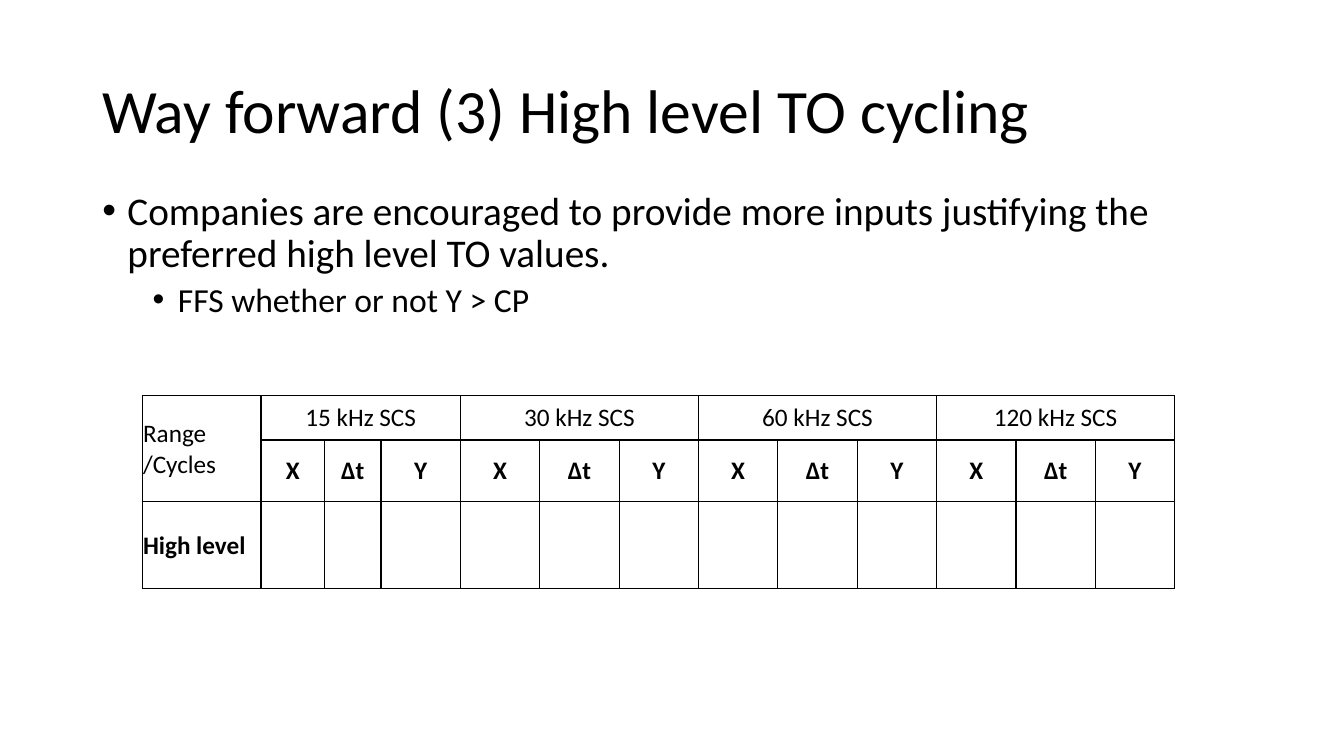
import pptx
import pptx.dml.color
import pptx.enum.text
import pptx.oxml
import pptx.oxml.ns
import pptx.util

Pt = pptx.util.Pt
ALIGN = pptx.enum.text.PP_ALIGN
MIDDLE = pptx.enum.text.MSO_ANCHOR.MIDDLE
FONT = "Calibri"
COLORS = {"text": "000000", "line": "000000", "fill": "FFFFFF"}
NS = pptx.oxml.ns.nsdecls("a")

BULLETS = [
    # text, size, left indent, space before
    ("Companies are encouraged to provide more inputs justifying the "
     "preferred high level TO values.", 28, 18, 0),
    ("FFS whether or not Y > CP", 24, 54, 5),
]
BANDS = ["15 kHz SCS", "30 kHz SCS", "60 kHz SCS", "120 kHz SCS"]
PARTS = ["X", "∆t", "Y"]
WIDTHS = [85, 45.4, 40.3] + [56.7] * 10
HEIGHTS = [31.7, 31.7, 62]


def rgb(name):
    return pptx.dml.color.RGBColor.from_string(COLORS[name])


def style(para, size, bold=False):
    for run in para.runs:
        run.font.name = FONT
        run.font.size = Pt(size)
        run.font.bold = bold
        run.font.color.rgb = rgb("text")


def add_box(slide, box):
    frame = slide.shapes.add_textbox(*map(Pt, box)).text_frame
    frame.word_wrap = True
    return frame


def add_title(slide, box, text):
    frame = add_box(slide, box)
    frame.vertical_anchor = MIDDLE
    frame.text = text
    para = frame.paragraphs[0]
    para.line_spacing = 0.9
    style(para, 44)


def add_list(slide, box, items):
    frame = add_box(slide, box)
    for i, (text, size, indent, gap) in enumerate(items):
        para = frame.add_paragraph() if i else frame.paragraphs[0]
        para.text = text
        para.level = i
        props = para._p.get_or_add_pPr()
        props.set("marL", str(Pt(indent)))
        props.set("indent", str(Pt(-18)))
        for tag in ('buFont %s typeface="Arial"', 'buChar %s char="•"'):
            props.append(pptx.oxml.parse_xml(f"<a:{tag % NS}/>"))
        para.line_spacing = 0.9
        para.space_before = Pt(gap)
        style(para, size)


def frame_cell(cell):
    props = cell._tc.get_or_add_tcPr()
    for side in "LRTB":
        props.append(pptx.oxml.parse_xml(
            f'<a:ln{side} {NS} w="{Pt(1)}"><a:solidFill>'
            f'<a:srgbClr val="{COLORS["line"]}"/></a:solidFill></a:ln{side}>'))
    cell.fill.solid()
    cell.fill.fore_color.rgb = rgb("fill")
    cell.vertical_anchor = MIDDLE
    cell.margin_left = cell.margin_right = cell.margin_top = Pt(0.7)
    cell.margin_bottom = Pt(0)


def write(cell, text, align=ALIGN.CENTER, bold=False):
    cell.text = text
    para = cell.text_frame.paragraphs[0]
    para.alignment = align
    style(para, 18, bold)


def add_grid(slide, left, top):
    box = (left, top, sum(WIDTHS), sum(HEIGHTS))
    grid = slide.shapes.add_table(
        len(HEIGHTS), len(WIDTHS), *map(Pt, box)).table
    grid.first_row = grid.horz_banding = False
    for col, width in zip(grid.columns, WIDTHS):
        col.width = Pt(width)
    for row, height in zip(grid.rows, HEIGHTS):
        row.height = Pt(height)
    for cell in grid.iter_cells():
        frame_cell(cell)

    # Row labels
    grid.cell(0, 0).merge(grid.cell(1, 0))
    write(grid.cell(0, 0), "Range /Cycles", ALIGN.LEFT)
    write(grid.cell(2, 0), "High level", ALIGN.LEFT, True)

    # Column heads, three parts to a band
    for i, band in enumerate(BANDS):
        start = 1 + i * len(PARTS)
        grid.cell(0, start).merge(grid.cell(0, start + len(PARTS) - 1))
        write(grid.cell(0, start), band)
        for j, part in enumerate(PARTS):
            write(grid.cell(1, start + j), part, bold=True)


def main():
    deck = pptx.Presentation()
    deck.slide_width, deck.slide_height = Pt(960), Pt(540)
    slide = deck.slides.add_slide(deck.slide_layouts[6])
    add_title(slide, (66, 28.75, 828, 104.4),
              "Way forward (3) High level TO cycling")
    add_list(slide, (66, 133.2, 828, 149.8), BULLETS)
    add_grid(slide, 101.5, 282.6)
    deck.save("out.pptx")


if __name__ == "__main__":
    main()
